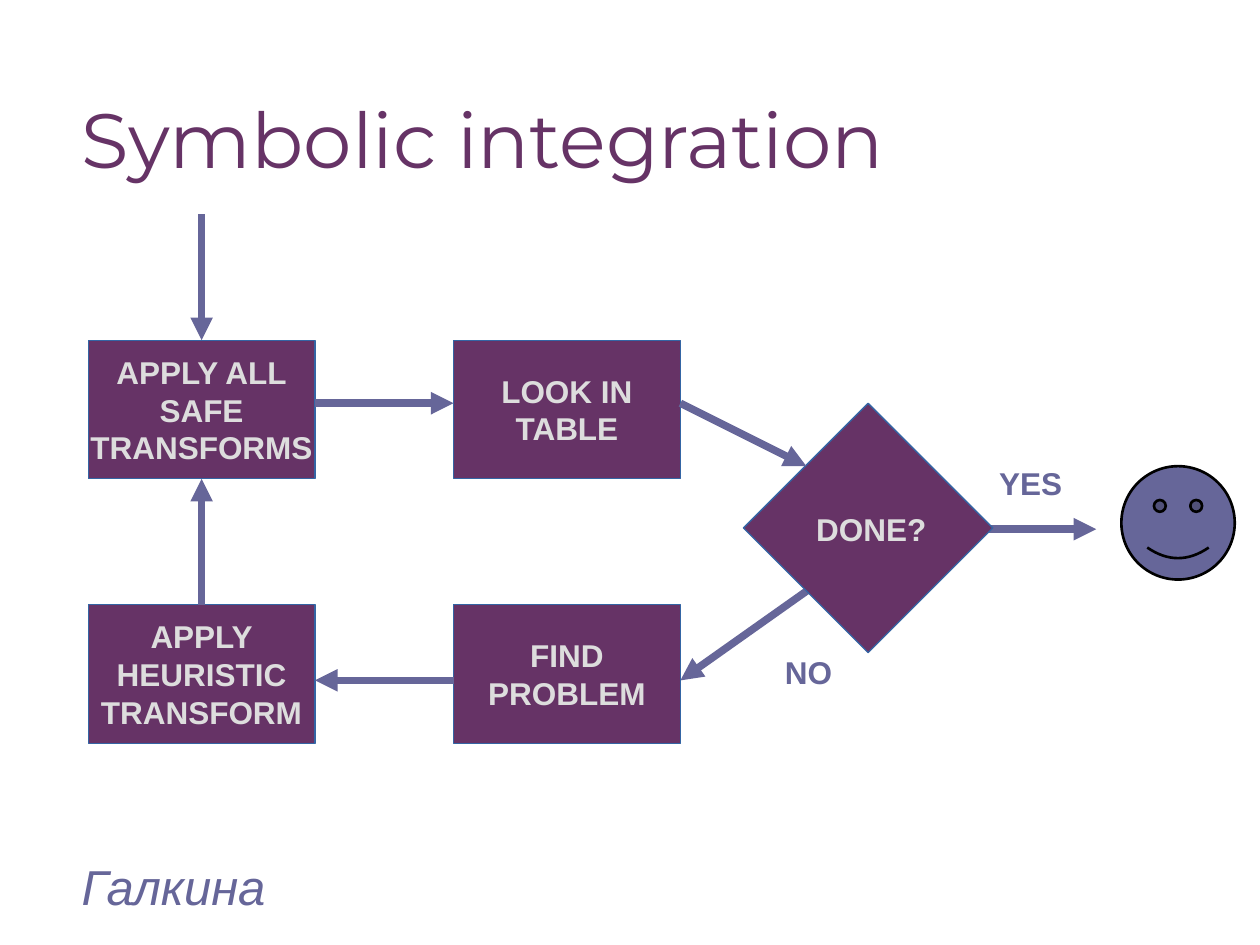
from lxml.etree import SubElement
from pptx import Presentation
from pptx.dml.color import RGBColor
from pptx.enum.shapes import MSO_CONNECTOR as Connector, MSO_SHAPE as Shape
from pptx.enum.text import MSO_ANCHOR as Anchor, PP_ALIGN as Align
from pptx.oxml.ns import qn
from pptx.util import Inches, Pt

PURPLE = RGBColor(0x66, 0x33, 0x66)
VIOLET = RGBColor(0x66, 0x66, 0x99)
LIGHT = RGBColor(0xDD, 0xDD, 0xDD)
BLUE = RGBColor(0x34, 0x65, 0xA4)
BLACK = RGBColor(0, 0, 0)

# Grid of the flow chart, in inches
COLUMNS = (0.7, 3.6)
ROWS = (2.7, 4.8)
BOX_WIDTH, BOX_HEIGHT = 1.8, 1.1
TOP, BOTTOM = 0, 2

# Column, row and lines of each step
STEPS = {
    "safe": (0, 0, ("APPLY ALL", "SAFE", "TRANSFORMS")),
    "table": (1, 0, ("LOOK IN", "TABLE")),
    "problem": (1, 1, ("FIND", "PROBLEM")),
    "heuristic": (0, 1, ("APPLY", "HEURISTIC", "TRANSFORM")),
}


def write_lines(frame, lines, size, color, font="Arial", bold=False, italic=False,
                align=Align.LEFT, spacing=None):
    for index, line in enumerate(lines):
        paragraph = frame.add_paragraph() if index else frame.paragraphs[0]
        paragraph.alignment = align
        if spacing:
            paragraph.line_spacing = spacing
        run = paragraph.add_run()
        run.text = line
        run.font.name = font
        run.font.size = Pt(size)
        run.font.bold = bold
        run.font.italic = italic
        run.font.color.rgb = color


def add_text(slide, area, text, size, color, anchor=Anchor.TOP, inset=(0.1, 0.05), **style):
    box = slide.shapes.add_textbox(*map(Inches, area))
    frame = box.text_frame
    frame.word_wrap = True
    frame.vertical_anchor = anchor
    frame.margin_left = frame.margin_right = Inches(inset[0])
    frame.margin_top = frame.margin_bottom = Inches(inset[1])
    write_lines(frame, [text], size, color, **style)


def add_filled(slide, kind, area, fill, outline, width):
    shape = slide.shapes.add_shape(kind, *map(Inches, area))
    shape.shadow.inherit = False
    shape.fill.solid()
    shape.fill.fore_color.rgb = fill
    shape.line.color.rgb = outline
    shape.line.width = Pt(width)
    return shape


def add_step(slide, column, row, lines):
    area = (COLUMNS[column], ROWS[row], BOX_WIDTH, BOX_HEIGHT)
    box = add_filled(slide, Shape.RECTANGLE, area, PURPLE, BLUE, 0.75)
    frame = box.text_frame
    frame.word_wrap = False
    frame.vertical_anchor = Anchor.MIDDLE
    write_lines(frame, lines, 18, LIGHT, bold=True, align=Align.CENTER)
    return box


def add_arrow(slide, start, end):
    arrow = slide.shapes.add_connector(Connector.STRAIGHT, *map(Inches, start + end))
    arrow.line.color.rgb = VIOLET
    arrow.line.width = Pt(4.31)
    SubElement(arrow.line._get_or_add_ln(), qn("a:tailEnd"), type="triangle")
    SubElement(arrow._element.spPr, qn("a:effectLst"))
    return arrow


def main():
    presentation = Presentation()
    presentation.slide_width, presentation.slide_height = Inches(10), Inches(7.5)
    slide = presentation.slides.add_slide(presentation.slide_layouts[6])

    # Arrows leaving the decision, partly behind it
    add_arrow(slide, (7.8, 4.2), (8.7, 4.2))
    add_arrow(slide, (6.7, 4.48), (5.4, 5.4))

    # Title and footer
    add_text(slide, (0.55, 0.53, 8.26, 1.22), "Symbolic integration", 44, PURPLE,
             anchor=Anchor.MIDDLE, font="Montserrat", spacing=0.9)
    add_text(slide, (0.55, 6.83, 6.69, 0.4), "Галкина", 28, VIOLET,
             anchor=Anchor.MIDDLE, italic=True)

    # Steps
    boxes = {name: add_step(slide, *step) for name, step in STEPS.items()}

    # Decision: a square turned on its corner
    decision = add_filled(slide, Shape.RECTANGLE, (6.19, 3.49, 1.4, 1.4), PURPLE, BLUE, 0.75)
    decision.rotation = 315
    add_text(slide, (6.38, 4, 1.5, 0.38), "DONE?", 18, LIGHT, bold=True)

    # Arrows between the steps
    left, right = COLUMNS
    middle = left + BOX_WIDTH / 2
    upper, lower = ROWS[0] + 0.5, ROWS[1] + 0.6
    entry = add_arrow(slide, (middle, ROWS[0] - 1), (middle, ROWS[0]))
    entry.end_connect(boxes["safe"], TOP)
    repeat = add_arrow(slide, (middle, ROWS[1]), (middle, ROWS[0] + BOX_HEIGHT))
    repeat.begin_connect(boxes["heuristic"], TOP)
    repeat.end_connect(boxes["safe"], BOTTOM)
    add_arrow(slide, (left + BOX_WIDTH, upper), (right, upper))
    add_arrow(slide, (right, lower), (left + BOX_WIDTH, lower))
    add_arrow(slide, (right + BOX_WIDTH, upper), (6.4, 3.7))

    # Answers
    for area, answer in (((6.1, 5.1, 0.7, 0.44), "NO"), ((7.8, 3.6, 0.8, 0.72), "YES")):
        add_text(slide, area, answer, 18, VIOLET, inset=(0.13, 0.08), bold=True)

    # Happy end
    face = add_filled(slide, Shape.SMILEY_FACE, (8.9, 3.7, 0.9, 0.9), VIOLET, BLACK, 1.5)
    face.adjustments[0] = 0.05

    presentation.save("out.pptx")


if __name__ == "__main__":
    main()
